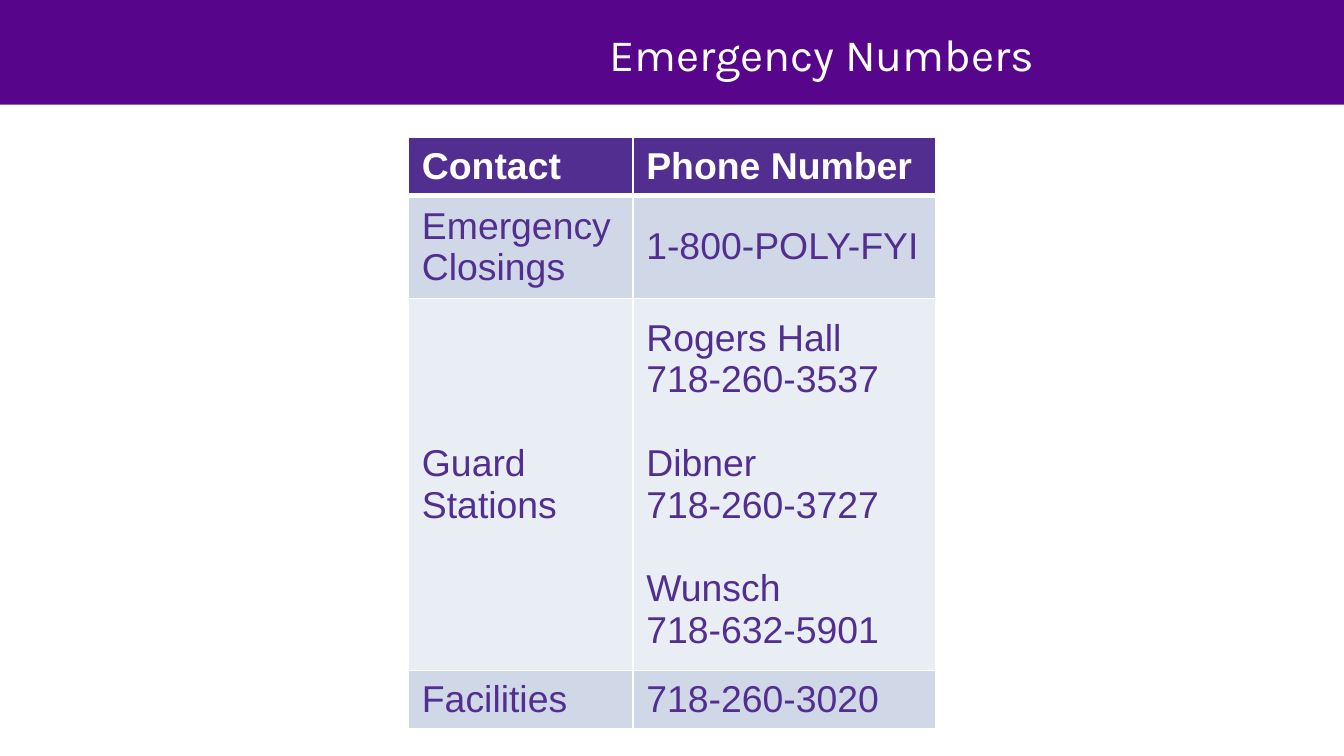
"""Build the slide of emergency phone numbers."""
from dataclasses import dataclass

from lxml import etree
from pptx import Presentation
from pptx.dml.color import RGBColor
from pptx.enum.shapes import MSO_SHAPE
from pptx.enum.text import MSO_ANCHOR, PP_ALIGN
from pptx.oxml.ns import qn
from pptx.util import Cm, Pt

RECT = MSO_SHAPE.RECTANGLE
MIDDLE = MSO_ANCHOR.MIDDLE
CENTER = PP_ALIGN.CENTER

TITLE = "Emergency Numbers"
ROWS = [
    ("Contact", "Phone Number"),
    ("Emergency Closings", "1-800-POLY-FYI"),
    ("Guard Stations", [
        ("Rogers Hall", "718-260-3537"),
        ("Dibner", "718-260-3727"),
        ("Wunsch", "718-632-5901"),
    ]),
    ("Facilities", "718-260-3020"),
]
WIDTHS = [4.24, 5.72]
HEIGHTS = [1.1, 1.95, 7.03, 1.1]


@dataclass(frozen=True)
class Theme:
    banner: str = "57068C"
    head: str = "522E91"
    ink: str = "522E91"
    white: str = "FFFFFF"
    bands: tuple = ("E9EDF4", "D0D8E8")
    title_font: str = "Karla"
    body_font: str = "Arial"
    title_size: int = 24
    body_size: int = 20
    gap: float = 22.5


THEME = Theme()


def paint(fill, color):
    fill.solid()
    fill.fore_color.rgb = RGBColor.from_string(color)


def add_text(para, text, font, size, color, bold=False):
    run = para.add_run()
    run.text = text
    run.font.name = font
    run.font.size = Pt(size)
    run.font.bold = bold
    run.font.color.rgb = RGBColor.from_string(color)


def add_edges(cell, widths):
    props = cell._tc.get_or_add_tcPr()
    for side, width in widths.items():
        line = etree.SubElement(props, qn(f"a:ln{side}"), w=str(Pt(width)))
        fill = etree.SubElement(line, qn("a:solidFill"))
        etree.SubElement(fill, qn("a:srgbClr"), val=THEME.white)


def fill_cell(cell, value, row):
    head = row == 0
    add_edges(cell, {"L": 1, "R": 1, "T": 3 if row == 1 else 1, "B": 3 if head else 1})
    paint(cell.fill, THEME.head if head else THEME.bands[row % 2])
    cell.vertical_anchor = MIDDLE
    groups = [(value,)] if isinstance(value, str) else value
    lines = [(text, i > 0 and j == 0)
             for i, group in enumerate(groups) for j, text in enumerate(group)]
    frame = cell.text_frame
    for i, (text, apart) in enumerate(lines):
        para = frame.add_paragraph() if i else frame.paragraphs[0]
        if apart:
            para.space_before = Pt(THEME.gap)
        add_text(para, text, THEME.body_font, THEME.body_size,
                 THEME.white if head else THEME.ink, head)


def add_banner(slide, width):
    banner = slide.shapes.add_shape(RECT, 0, 0, width, Cm(1.98))
    banner.shadow.inherit = False
    paint(banner.fill, THEME.banner)
    banner.line.fill.background()
    box = slide.shapes.add_textbox(Cm(6.3), Cm(0.64), Cm(18.47), Cm(0.74))
    frame = box.text_frame
    frame.word_wrap = True
    frame.vertical_anchor = MIDDLE
    frame.margin_left = frame.margin_right = 0
    frame.margin_top = frame.margin_bottom = 0
    para = frame.paragraphs[0]
    para.alignment = CENTER
    add_text(para, TITLE, THEME.title_font, THEME.title_size, THEME.white)


def add_numbers(slide, width):
    wide, high = Cm(sum(WIDTHS)), Cm(sum(HEIGHTS))
    left = (width - wide) // 2
    table = slide.shapes.add_table(
        len(ROWS), len(WIDTHS), left, Cm(2.59), wide, high).table
    for col, size in zip(table.columns, WIDTHS):
        col.width = Cm(size)
    for r, (row, size) in enumerate(zip(ROWS, HEIGHTS)):
        table.rows[r].height = Cm(size)
        for c, value in enumerate(row):
            fill_cell(table.cell(r, c), value, r)


def main():
    deck = Presentation()
    deck.slide_width, deck.slide_height = Cm(25.4), Cm(14.29)
    slide = deck.slides.add_slide(deck.slide_layouts[6])
    add_banner(slide, deck.slide_width)
    add_numbers(slide, deck.slide_width)
    deck.save("out.pptx")


if __name__ == "__main__":
    main()
